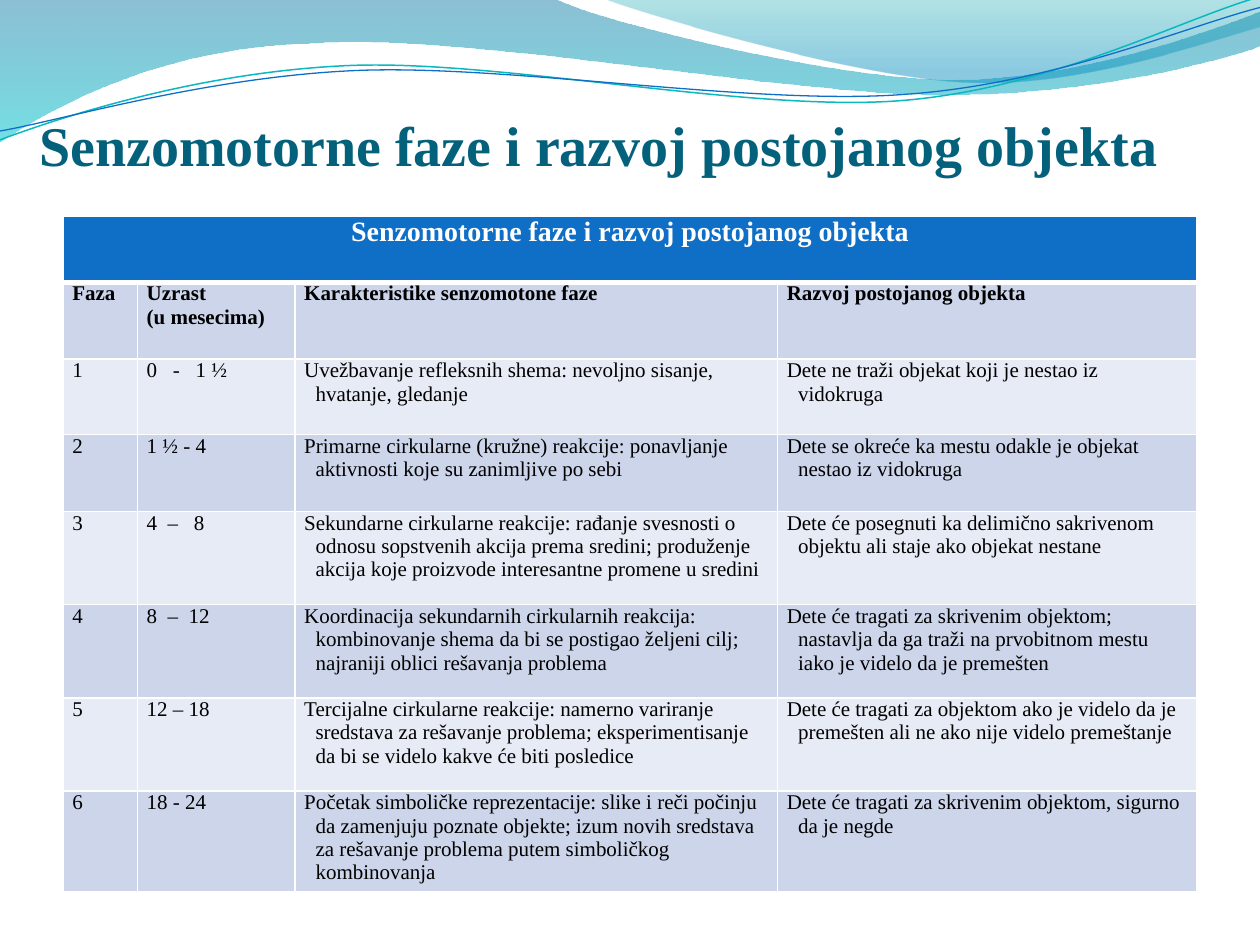
from math import cos, radians, sin

from lxml import etree
from pptx import Presentation
from pptx.dml.color import RGBColor
from pptx.enum.text import MSO_ANCHOR, PP_ALIGN
from pptx.oxml.ns import qn
from pptx.util import Inches, Pt

LEFT, CENTER, JUSTIFY = PP_ALIGN.LEFT, PP_ALIGN.CENTER, PP_ALIGN.JUSTIFY
BOTTOM, TOP = MSO_ANCHOR.BOTTOM, MSO_ANCHOR.TOP
FONT = "Times New Roman"

# Content
TITLE = "Senzomotorne faze i razvoj postojanog objekta"
HEADINGS = ("Faza", "Uzrast\n(u mesecima)", "Karakteristike senzomotone faze",
            "Razvoj postojanog objekta")
PHASES = [
    ("1", "0   -   1 ½",
     "Uvežbavanje refleksnih shema: nevoljno sisanje, hvatanje, gledanje",
     "Dete ne traži objekat koji je nestao iz vidokruga"),
    ("2", "1 ½ - 4",
     "Primarne cirkularne (kružne) reakcije: ponavljanje aktivnosti koje su "
     "zanimljive po sebi",
     "Dete se okreće ka mestu odakle je objekat nestao iz vidokruga"),
    ("3", "4  –   8",
     "Sekundarne cirkularne reakcije: rađanje svesnosti o odnosu sopstvenih "
     "akcija prema sredini; produženje akcija koje proizvode interesantne "
     "promene u sredini",
     "Dete će posegnuti ka delimično sakrivenom objektu ali staje ako objekat "
     "nestane"),
    ("4", "8  –  12",
     "Koordinacija sekundarnih cirkularnih reakcija: kombinovanje shema da bi "
     "se postigao željeni cilj; najraniji oblici rešavanja problema",
     "Dete će tragati za skrivenim objektom; nastavlja da ga traži na "
     "prvobitnom mestu iako je videlo da je premešten"),
    ("5", "12 – 18",
     "Tercijalne cirkularne reakcije: namerno variranje sredstava za rešavanje "
     "problema; eksperimentisanje da bi se videlo kakve će biti posledice",
     "Dete će tragati za objektom ako je videlo da je premešten ali ne ako "
     "nije videlo premeštanje"),
    ("6", "18 - 24",
     "Početak simboličke reprezentacije: slike i reči počinju da zamenjuju "
     "poznate objekte; izum novih sredstava za rešavanje problema putem "
     "simboličkog kombinovanja",
     "Dete će tragati za skrivenim objektom, sigurno da je negde"),
]
COLUMN_WIDTHS = (0.59, 1.25, 3.83, 3.33)
ROW_HEIGHTS = (0.52, 0.61, 0.6, 0.61, 0.74, 0.74, 0.74, 0.75)
BANDS = ("CCD5EA", "E7EBF5")

# Waves: a start, then pieces of 2 numbers (straight) or 6 (cubic curve);
# gradient stops are position, colour, opacity in percent
WAVES = [
    {"start": (0, 0),
     "pieces": [(4.4, -0.01), (4.76, 0.17, 6.64, 0.63, 7.58, 0.63),
                (8.53, 0.63, 9.58, 0.26, 10, 0.09), (10.01, 0.36),
                (9.83, 0.44, 8.7, 0.76, 7.46, 0.75),
                (6.22, 0.75, 3.82, 0.28, 2.57, 0.34),
                (1.29, 0.36, 0.46, 0.83, -0.01, 1.13)],
     "stops": [(0, "0074A1", 45), (1, "00C6CF", 55)]},
    {"start": (4.79, -0.01),
     "pieces": [(5.09, 0.11, 6.82, 0.62, 7.69, 0.65),
                (8.56, 0.69, 9.61, 0.32, 10, 0.21), (10, 0)],
     "stops": [(0, "00A1A9", 30), (0.8, "008BBF", 45)]},
    {"start": (0, 1.11), "center": (4.99, 0.58), "line": ("0AB8BF", 0.85),
     "pieces": [(0.48, 0.93, 1.58, 0.57, 2.77, 0.52),
                (3.95, 0.47, 5.93, 0.89, 7.13, 0.8),
                (8.33, 0.71, 9.38, 0.15, 9.98, -0.02)]},
    {"start": (0, 1.04), "center": (5, 0.59), "line": ("0F6FC6", 0.75),
     "pieces": [(0.47, 0.96, 1.64, 0.61, 2.83, 0.56),
                (4.03, 0.51, 5.97, 0.84, 7.17, 0.75),
                (8.36, 0.67, 9.41, 0.21, 10, 0.06)]},
]
LINE_TILT = -2.7


def rgb(value):
    return RGBColor.from_string(value)


def set_all(target, values):
    for name, value in values.items():
        setattr(target, name, value)


def level(point, center):
    """Turn a point back by the tilt, so that the shape itself can be rotated."""
    angle = radians(-LINE_TILT)
    dx, dy = point[0] - center[0], point[1] - center[1]
    return (center[0] + dx * cos(angle) - dy * sin(angle),
            center[1] + dx * sin(angle) + dy * cos(angle))


def wave_shape(slide, wave):
    points = [wave["start"]]
    for piece in wave["pieces"]:
        points += zip(piece[::2], piece[1::2])
    if "center" in wave:
        points = [level(point, wave["center"]) for point in points]
    first, *rest = [(Inches(x), Inches(y)) for x, y in points]
    builder = slide.shapes.build_freeform(*first, scale=1.0)
    builder.add_line_segments(rest, close="stops" in wave)
    shape = builder.convert_to_shape()
    # Join the three points of each curved piece into one cubic
    segments = iter(list(shape._element.iter(qn("a:lnTo"))))
    for piece in wave["pieces"]:
        segment = next(segments)
        if len(piece) == 6:
            curve = etree.Element(qn("a:cubicBezTo"))
            segment.addprevious(curve)
            for part in (segment, next(segments), next(segments)):
                curve.append(part[0])
                part.getparent().remove(part)
    return shape


def add_wave(slide, wave):
    shape = wave_shape(slide, wave)
    shape.shadow.inherit = False
    if "line" in wave:
        colour, width = wave["line"]
        shape.rotation = LINE_TILT
        shape.fill.background()
        shape.line.color.rgb = rgb(colour)
        shape.line.width = Pt(width)
        return
    shape.line.fill.background()
    shape.fill.gradient()
    shape.fill.gradient_angle = 270
    for stop, (position, colour, _) in zip(shape.fill.gradient_stops, wave["stops"]):
        stop.position = position
        stop.color.rgb = rgb(colour)
    for node, (_, _, opacity) in zip(shape._element.spPr.iter(qn("a:srgbClr")),
                                     wave["stops"]):
        etree.SubElement(node, qn("a:alpha"), val=str(opacity * 1000))


def write(frame, text, size, colour, bold, align=LEFT, hanging=0):
    for i, line in enumerate(text.split("\n")):
        paragraph = frame.add_paragraph() if i else frame.paragraphs[0]
        paragraph.alignment = align
        if hanging:
            props = paragraph._p.get_or_add_pPr()
            props.set("marL", str(Inches(hanging)))
            props.set("indent", str(-Inches(hanging)))
        run = paragraph.add_run()
        run.text = line
        set_all(run.font, {"name": FONT, "size": Pt(size), "bold": bold})
        run.font.color.rgb = rgb(colour)


def style_cell(cell, fill, top=1, bottom=1):
    set_all(cell, {"margin_left": Pt(5.4), "margin_right": Pt(5.4),
                   "margin_top": 0, "margin_bottom": 0, "vertical_anchor": TOP})
    props = cell._tc.get_or_add_tcPr()
    for side, width in (("L", 1), ("R", 1), ("T", top), ("B", bottom)):
        border = etree.SubElement(props, qn("a:ln" + side), w=str(Pt(width)))
        solid = etree.SubElement(border, qn("a:solidFill"))
        etree.SubElement(solid, qn("a:srgbClr"), val="FFFFFF")
    cell.fill.solid()
    cell.fill.fore_color.rgb = rgb(fill)


prs = Presentation()
prs.slide_width, prs.slide_height = Inches(10), Inches(7.5)
slide = prs.slides.add_slide(prs.slide_layouts[6])

for wave in WAVES:
    add_wave(slide, wave)

# Title
title = slide.shapes.add_textbox(Inches(0.31), Inches(0.78), Inches(9.19),
                                 Inches(0.63)).text_frame
set_all(title, {"word_wrap": True, "vertical_anchor": BOTTOM, "margin_left": 0,
                "margin_right": 0, "margin_top": Inches(0.05), "margin_bottom": 0})
write(title, TITLE, 32, "04617B", True)

# Table of phases
table_frame = slide.shapes.add_table(
    len(ROW_HEIGHTS), len(COLUMN_WIDTHS), Inches(0.5), Inches(1.72),
    Inches(sum(COLUMN_WIDTHS)), Inches(sum(ROW_HEIGHTS)))
table = table_frame.table
for column, width in zip(table.columns, COLUMN_WIDTHS):
    column.width = Inches(width)
for row, height in zip(table.rows, ROW_HEIGHTS):
    row.height = Inches(height)
table_frame.height = Inches(5.37)

for cell in table.rows[0].cells:
    style_cell(cell, "0F6FC6", bottom=3)
table.cell(0, 0).merge(table.cell(0, len(COLUMN_WIDTHS) - 1))
write(table.cell(0, 0).text_frame, TITLE, 16, "FFFFFF", True, CENTER)

for r, texts in enumerate([HEADINGS] + PHASES):
    heading = r == 0
    for c, text in enumerate(texts):
        cell = table.cell(r + 1, c)
        style_cell(cell, BANDS[r % 2], top=3 if heading else 1)
        align = JUSTIFY if c < 2 and not heading else LEFT
        hanging = 0.09 if c >= 2 and not heading else 0
        write(cell.text_frame, text, 12, "000000", heading, align, hanging)

prs.save("out.pptx")
